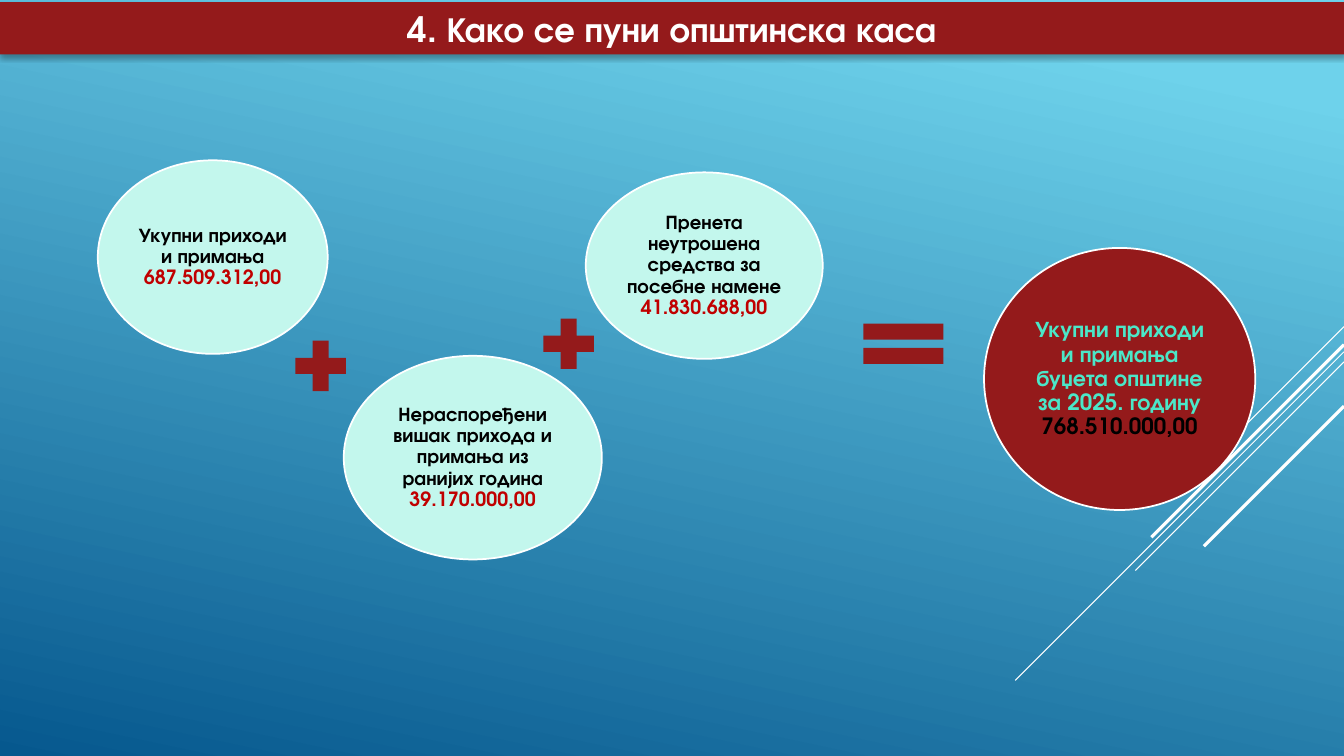
"""Build the slide on how the municipal treasury is filled."""
from lxml import etree
from pptx import Presentation
from pptx.dml.color import RGBColor
from pptx.enum.shapes import MSO_CONNECTOR, MSO_SHAPE as Preset
from pptx.enum.text import MSO_ANCHOR, MSO_AUTO_SIZE, PP_ALIGN
from pptx.oxml import parse_xml
from pptx.oxml.ns import nsdecls, qn
from pptx.util import Inches, Pt

FONT = "TeX Gyre Adventor"
RED, MINT, WHITE, BLACK = "941A1B", "C3F7ED", "FFFFFF", "000000"
WIDTH, HEIGHT = 13.33, 7.5
TITLE = "4. Како се пуни општинска каса"

# label, amount, box, fill, label colour, amount colour, size
SUMS = [
    ("Укупни приходи и примања ", "687.509.312,00",
     (0.97, 1.59, 2.28, 1.92), MINT, BLACK, "C00000", 14),
    ("Нераспоређени вишак прихода и примања из ранијих година ", "39.170.000,00",
     (3.41, 3.53, 2.56, 2.02), MINT, BLACK, "C00000", 14),
    ("Пренета неутрошена средства за посебне намене ", "41.830.688,00",
     (5.81, 1.71, 2.35, 1.85), MINT, BLACK, "C00000", 14),
    ("Укупни приходи и примања буџета општине за 2025. годину ", "768.510.000,00",
     (9.76, 2.46, 2.69, 2.6), RED, "4BE7C8", BLACK, 16),
]
OPERATORS = [
    (Preset.MATH_PLUS, (2.84, 3.29, 0.68, 0.68)),
    (Preset.MATH_PLUS, (5.3, 3.07, 0.68, 0.68)),
    (Preset.MATH_EQUAL, (8.42, 3.07, 1.08, 0.68)),
]
# height at the right edge, diagonal reach, weight
RAYS = [(3.24, 1, 0.75), (3.49, 3.26, 0.75), (3.59, 2.07, 0.75),
        (3.42, 1.91, 2.25), (4.03, 1.39, 2.25)]


def color(value):
    return RGBColor.from_string(value)


def paint(part, fill):
    part.fill.solid()
    part.fill.fore_color.rgb = color(fill)


def set_font(paragraph, size):
    paragraph.alignment = PP_ALIGN.CENTER
    paragraph.font.name = FONT
    paragraph.font.size = Pt(size)
    paragraph.font.bold = True


def add_preset(slide, preset, box, fill):
    part = slide.shapes.add_shape(preset, *map(Inches, box))
    part.shadow.inherit = False
    paint(part, fill)
    part.line.fill.background()
    return part


def add_background(slide):
    fill = slide.background.fill
    fill.gradient()
    fill.gradient_angle = 258
    for stop, (position, shade) in zip(fill.gradient_stops,
                                       [(0.1, "6ED2EB"), (1, "06588E")]):
        stop.position = position
        stop.color.rgb = color(shade)


def add_title(slide):
    title = slide.shapes.title
    title.left, title.top, title.width, title.height = map(
        Inches, (0, 0.02, WIDTH, 0.52))
    properties = title._element.spPr
    properties.append(parse_xml(
        f'<a:prstGeom {nsdecls("a")} prst="roundRect"><a:avLst/></a:prstGeom>'))
    paint(title, RED)
    properties.append(parse_xml(
        f'<a:effectLst {nsdecls("a")}><a:outerShdw blurRad="{Pt(3.5)}" '
        f'dist="{Pt(2.2)}" dir="5400000" rotWithShape="0"><a:srgbClr val="{BLACK}">'
        '<a:alpha val="32000"/></a:srgbClr></a:outerShdw></a:effectLst>'))
    frame = title.text_frame
    frame.text = TITLE
    frame.auto_size = MSO_AUTO_SIZE.NONE
    frame.vertical_anchor = MSO_ANCHOR.MIDDLE
    heading = frame.paragraphs[0]
    set_font(heading, 25)
    heading.font.color.rgb = color(WHITE)


def add_ray(slide, top, reach, weight):
    ray = slide.shapes.add_connector(
        MSO_CONNECTOR.STRAIGHT, Inches(WIDTH), Inches(top),
        Inches(WIDTH - reach), Inches(top + reach))
    ray.line.color.rgb = color(WHITE)
    ray.line.width = Pt(weight)
    etree.SubElement(ray._element.spPr, qn("a:effectLst"))


def add_sum(slide, label, amount, box, fill, label_color, amount_color, size):
    circle = add_preset(slide, Preset.OVAL, box, fill)
    circle.line.color.rgb = color(WHITE)
    circle.line.width = Pt(1.25)
    frame = circle.text_frame
    frame.word_wrap = True
    frame.vertical_anchor = MSO_ANCHOR.MIDDLE
    frame.margin_left = frame.margin_right = Inches(0.02)
    frame.margin_top = frame.margin_bottom = Inches(0.02)
    paragraph = frame.paragraphs[0]
    set_font(paragraph, size)
    paragraph.line_spacing = 0.9
    for wording, shade in [(label, label_color), (amount, amount_color)]:
        run = paragraph.add_run()
        run.text = wording
        run.font.color.rgb = color(shade)


def main():
    deck = Presentation()
    deck.slide_width, deck.slide_height = Inches(WIDTH), Inches(HEIGHT)
    slide = deck.slides.add_slide(deck.slide_layouts[5])
    add_background(slide)
    add_title(slide)
    for ray in RAYS:
        add_ray(slide, *ray)
    for entry in SUMS:
        add_sum(slide, *entry)
    for preset, box in OPERATORS:
        add_preset(slide, preset, box, RED)
    deck.save("out.pptx")


if __name__ == "__main__":
    main()
